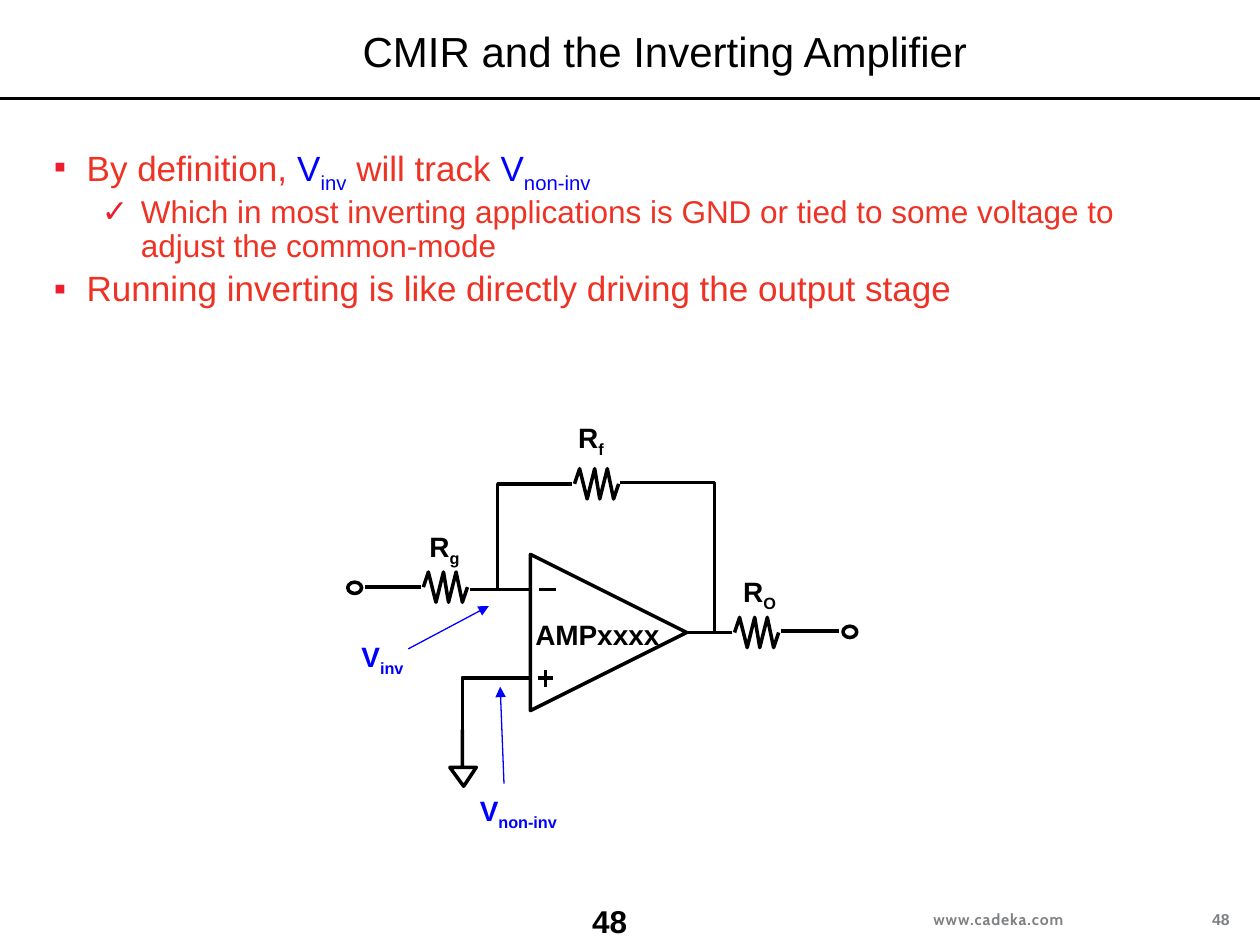
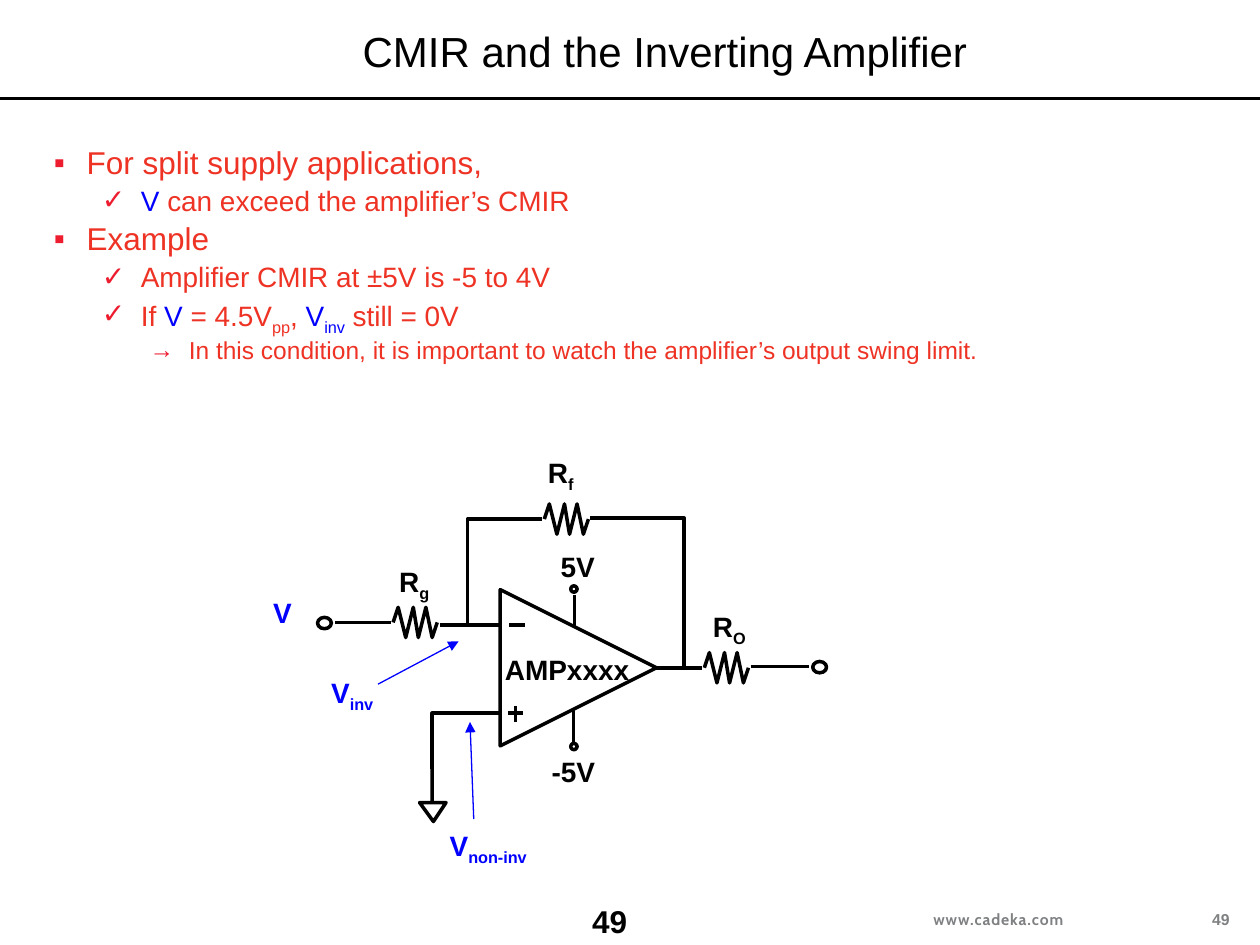
import pptx
import pptx.util
import pptx.dml.color
import pptx.enum.shapes
import pptx.enum.text
from lxml import etree
from pptx.oxml.ns import qn

BLACK = pptx.dml.color.RGBColor(0x00, 0x00, 0x00)
WHITE = pptx.dml.color.RGBColor(0xFF, 0xFF, 0xFF)
RED = pptx.dml.color.RGBColor(0xEE, 0x32, 0x24)
BLUE = pptx.dml.color.RGBColor(0x00, 0x00, 0xFF)
GREY = pptx.dml.color.RGBColor(0x7E, 0x80, 0x82)
BULLET_RED = "ED1C2E"

WIDTH, HEIGHT = 10, 7.5
TITLE = "CMIR and the Inverting Amplifier"
SITE = "www.cadeka.com"
AMPLIFIER_NAME = "AMPxxxx"

V = ("V", BLUE)
V_INV = [V, ("inv", BLUE, "sub")]
V_NON_INV = [V, ("non-inv", BLUE, "sub")]

SLIDES = [
    dict(
        number=48,
        origin=(4.21, 4.40),
        split_supply=False,
        sizes=(20, 18),
        bullets=[
            (0, ["By definition, ", *V_INV, " will track ", *V_NON_INV]),
            (1, ["Which in most inverting applications is GND or tied to "
                 "some voltage to adjust the common-mode"]),
            (0, ["Running inverting is like directly driving the output stage"]),
        ],
    ),
    dict(
        number=49,
        origin=(3.97, 4.68),
        split_supply=True,
        sizes=(18, 16, 14),
        bullets=[
            (0, ["For split supply applications,"]),
            (1, [V, " can exceed the amplifier’s CMIR"]),
            (0, ["Example"]),
            (1, ["Amplifier CMIR at ±5V is -5 to 4V"]),
            (1, ["If ", V, " = 4.5V", ("pp", RED, "sub"), ", ", *V_INV,
                 " still = 0V"]),
            (2, ["In this condition, it is important to watch the amplifier’s "
                 "output swing limit."]),
        ],
    ),
]

BULLET_LEVELS = [("▪", 0.26, 0.26), ("✓", 0.69, 0.31), ("→", 1.07, 0.31)]

AMPLIFIER_SIDE = 1.24
AMPLIFIER = [(0, 0), (0, AMPLIFIER_SIDE),
             (AMPLIFIER_SIDE, AMPLIFIER_SIDE / 2), (0, 0)]
RESISTOR_STEPS = [0, 0.04, 0.10, 0.16, 0.20, 0.26, 0.31, 0.35]
RESISTOR_SWING = 0.12
RESISTORS = [(0.35, -0.56), (-0.85, 0.26), (1.62, 0.62)]
WIRES = [
    [(1.24, 0.62), (1.60, 0.62)],
    [(-0.01, 0.28), (-0.48, 0.28)],
    [(-0.26, 0.28), (-0.26, -0.56), (0.33, -0.56)],
    [(1.46, 0.62), (1.46, -0.57), (0.71, -0.57)],
    [(-0.87, 0.26), (-1.31, 0.26)],
    [(1.99, 0.61), (2.45, 0.61)],
    [(0, 0.98), (-0.54, 0.98), (-0.54, 1.42)],
    [(-0.54, 1.39), (-0.54, 1.69), (-0.64, 1.69), (-0.53, 1.84),
     (-0.43, 1.69), (-0.54, 1.69)],
]
SIGNS = [
    [(0.07, 0.28), (0.20, 0.28)],
    [(0.06, 0.98), (0.18, 0.98)],
    [(0.12, 1.05), (0.12, 0.92)],
]
TERMINALS = [(-1.45, 0.22), (2.48, 0.57)]
POINTERS = [[(-0.97, 0.75), (-0.33, 0.41)], [(-0.21, 1.82), (-0.24, 1.05)]]
LABELS = [
    ([AMPLIFIER_NAME], (-0.06, 0.45, 1.30, 0.37)),
    (["R", ("f", BLACK, "sub")], (0.28, -1.11, 0.43, 0.40)),
    (["R", ("g", BLACK, "sub")], (-0.90, -0.25, 0.48, 0.40)),
    (["R", ("O", BLACK, "sub")], (1.59, 0.11, 0.51, 0.40)),
    (V_NON_INV, (-0.50, 1.85, 0.91, 0.40)),
    (V_INV, (-1.44, 0.63, 0.58, 0.40)),
]
SUPPLY_WIRES = [[(0.59, 0.30), (0.59, 0.04)], [(0.58, 1.21), (0.58, 0.95)]]
SUPPLY_TERMINALS = [(0.56, -0.03), (0.56, 1.22)]
SUPPLY_LABELS = [
    (["5V"], (0.38, -0.37, 0.55, 0.36)),
    (["-5V"], (0.31, 1.26, 0.65, 0.36)),
    ([V], (-1.90, 0, 0.37, 0.40)),
]


def inches(*values):
    return [pptx.util.Inches(value) for value in values]


def shift(points, origin):
    return [(x + origin[0], y + origin[1]) for x, y in points]


def write_spans(para, spans, size, color=BLACK, bold=False, font="Arial",
                tracking=0):
    for part in spans:
        text, tint, *style = part if isinstance(part, tuple) else (part, color)
        span = para.add_run()
        span.text = text
        span.font.name = font
        span.font.size = pptx.util.Pt(size)
        span.font.bold = bold
        span.font.color.rgb = tint
        properties = span._r.get_or_add_rPr()
        if style:
            properties.set("baseline", "-25000")
        if tracking:
            properties.set("spc", str(tracking))


def add_text(page, spans, at, wrap=True, inset=True, middle=False, **text_format):
    box = page.shapes.add_textbox(*inches(*at))
    frame = box.text_frame
    frame.word_wrap = wrap
    if not wrap:
        frame.auto_size = pptx.enum.text.MSO_AUTO_SIZE.SHAPE_TO_FIT_TEXT
    if not inset:
        frame.margin_left = frame.margin_right = 0
        frame.margin_top = frame.margin_bottom = 0
    if middle:
        frame.vertical_anchor = pptx.enum.text.MSO_ANCHOR.MIDDLE
    if spans:
        write_spans(frame.paragraphs[0], spans, **text_format)
    return frame


def add_bullets(page, bullets, sizes):
    frame = add_text(page, [], (0.33, 1.12, 9.33, 5.62))
    for index, (level, spans) in enumerate(bullets):
        para = frame.add_paragraph() if index else frame.paragraphs[0]
        mark, margin, hang = BULLET_LEVELS[level]
        para.level = level
        properties = para._p.get_or_add_pPr()
        properties.set("marL", str(pptx.util.Inches(margin)))
        properties.set("indent", str(-pptx.util.Inches(hang)))
        tint = etree.SubElement(properties, qn("a:buClr"))
        etree.SubElement(tint, qn("a:srgbClr"), val=BULLET_RED)
        etree.SubElement(properties, qn("a:buFont"), typeface="Arial")
        etree.SubElement(properties, qn("a:buChar"), char=mark)
        para.line_spacing = 0.9
        if index:
            para.space_before = pptx.util.Pt(round(sizes[level] * 0.2, 1))
        write_spans(para, spans, sizes[level], color=RED)


def draw_line(page, points, color=BLACK, weight=2, arrow=False, fill=None):
    if len(points) == 2:
        shape = page.shapes.add_connector(
            pptx.enum.shapes.MSO_CONNECTOR.STRAIGHT,
            *inches(*points[0], *points[1]))
        etree.SubElement(shape._element.spPr, qn("a:effectLst"))
    else:
        start, *rest = [inches(*point) for point in points]
        builder = page.shapes.build_freeform(*start)
        builder.add_line_segments(rest, close=points[0] == points[-1])
        shape = builder.convert_to_shape()
        paint(shape, fill)
    shape.line.color.rgb = color
    shape.line.width = pptx.util.Pt(weight)
    if arrow:
        etree.SubElement(shape.line._get_or_add_ln(), qn("a:tailEnd"),
                         type="triangle")


def paint(shape, fill):
    shape.shadow.inherit = False
    if fill is None:
        shape.fill.background()
    else:
        shape.fill.solid()
        shape.fill.fore_color.rgb = fill


def draw_terminal(page, corner, width, height, fill=None):
    ring = page.shapes.add_shape(pptx.enum.shapes.MSO_SHAPE.OVAL,
                                 *inches(*corner, width, height))
    paint(ring, fill)
    ring.line.color.rgb = BLACK
    ring.line.width = pptx.util.Pt(2)


def draw_labels(page, labels, origin):
    for spans, (left, top, width, height) in labels:
        corner = shift([(left, top)], origin)[0]
        add_text(page, spans, (*corner, width, height), wrap=False,
                 size=16, bold=True)


def draw_resistor(page, start):
    last = len(RESISTOR_STEPS) - 1
    zigzag = [(step, 0 if index in (0, last) else RESISTOR_SWING * (-1) ** index)
              for index, step in enumerate(RESISTOR_STEPS)]
    draw_line(page, shift(zigzag, start))


def draw_circuit(page, origin, split_supply):
    draw_line(page, shift(AMPLIFIER, origin), fill=WHITE)
    for points in SIGNS + WIRES:
        draw_line(page, shift(points, origin))
    for start in shift(RESISTORS, origin):
        draw_resistor(page, start)
    for corner in shift(TERMINALS, origin):
        draw_terminal(page, corner, 0.11, 0.09)
    for points in POINTERS:
        draw_line(page, shift(points, origin), color=BLUE, weight=0.75, arrow=True)
    draw_labels(page, LABELS, origin)
    if split_supply:
        for points in SUPPLY_WIRES:
            draw_line(page, shift(points, origin))
        for corner in shift(SUPPLY_TERMINALS, origin):
            draw_terminal(page, corner, 0.05, 0.05, fill=WHITE)
        draw_labels(page, SUPPLY_LABELS, origin)


def add_frame(page, number):
    draw_line(page, [(0, 0.78), (WIDTH, 0.78)], weight=1.5)
    add_text(page, [SITE], (7.31, 7.17, 1.43, 0.25), wrap=False, size=9,
             color=GREY, bold=True, font="Cabin", tracking=50)
    add_text(page, [str(number)], (9.62, 7.22, 0.31, 0.15), inset=False,
             size=9, color=GREY, bold=True)
    add_text(page, [TITLE], (2.78, 0.08, 6.97, 0.65), middle=True, size=24)
    add_text(page, [str(number)], (4.60, 7.11, 0.59, 0.25), size=18, bold=True)


def main():
    deck = pptx.Presentation()
    deck.slide_width, deck.slide_height = inches(WIDTH, HEIGHT)
    for content in SLIDES:
        page = deck.slides.add_slide(deck.slide_layouts[6])
        add_frame(page, content["number"])
        add_bullets(page, content["bullets"], content["sizes"])
        draw_circuit(page, content["origin"], content["split_supply"])
    deck.save("out.pptx")


if __name__ == "__main__":
    main()
